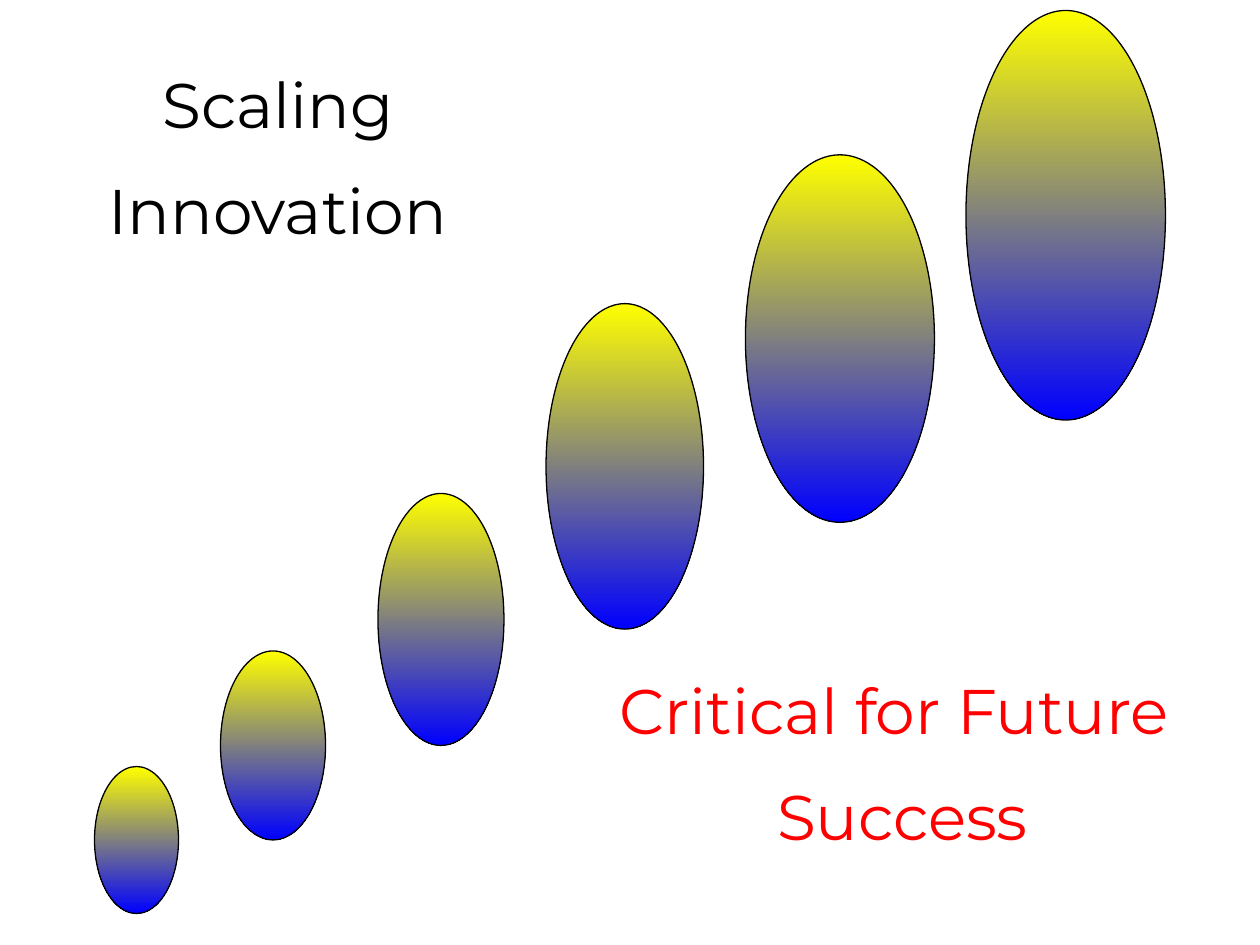
from dataclasses import dataclass

from pptx import Presentation
from pptx import util as u
from pptx.dml import color
from pptx.enum import shapes, text


@dataclass(frozen=True)
class Theme:
    top: str = "FFFF00"
    bottom: str = "0000FF"
    outline: str = "000000"
    title: str = "000000"
    message: str = "FF0000"
    font: str = "Montserrat"
    size: float = 36
    line_gap: float = 17.5


THEME = Theme()

# Left, top, width, height of each growing ellipse, smallest first
ELLIPSES = [
    (54, 438, 48, 84),
    (126, 372, 60, 108),
    (216, 282, 72, 144),
    (312, 173.5, 90, 186),
    (426, 88.5, 108, 210),
    (552, 6, 114, 234),
]


def points(*lengths):
    return [u.Pt(length) for length in lengths]


def rgb(value):
    return color.RGBColor.from_string(value)


def set_format(target, values):
    for name, value in values.items():
        setattr(target, name, value)


def add_ellipse(page, place):
    ellipse = page.shapes.add_shape(shapes.MSO_SHAPE.OVAL, *points(*place))
    ellipse.shadow.inherit = False
    ellipse.fill.gradient()
    ellipse.fill.gradient_angle = 270  # first colour at the top
    for stop, value in zip(ellipse.fill.gradient_stops, (THEME.top, THEME.bottom)):
        stop.color.rgb = rgb(value)
    ellipse.line.color.rgb = rgb(THEME.outline)
    ellipse.line.width = u.Pt(0.75)


def add_caption(page, place, lines, ink):
    box = page.shapes.add_textbox(*points(*place))
    set_format(box.text_frame, {
        "word_wrap": True,
        "auto_size": text.MSO_AUTO_SIZE.SHAPE_TO_FIT_TEXT,
    })
    for index, line in enumerate(lines):
        para = box.text_frame.add_paragraph() if index else box.text_frame.paragraphs[0]
        set_format(para, {
            "alignment": text.PP_ALIGN.CENTER,
            "space_before": u.Pt(THEME.line_gap if index else 0),
        })
        span = para.add_run()
        span.text = line
        set_format(span.font, {"name": THEME.font, "size": u.Pt(THEME.size)})
        span.font.color.rgb = rgb(ink)


def main():
    deck = Presentation()
    set_format(deck, {"slide_width": u.Pt(720), "slide_height": u.Pt(540)})
    page = deck.slides.add_slide(deck.slide_layouts[6])

    # Rising row of ellipses
    for place in ELLIPSES:
        add_ellipse(page, place)

    # Title and closing message
    add_caption(page, (-16.5, 34, 360, 116.5), ["Scaling ", "Innovation "], THEME.title)
    add_caption(page, (327, 380, 368, 116.5),
                ["Critical for Future", " Success"], THEME.message)

    deck.save("out.pptx")


if __name__ == "__main__":
    main()
